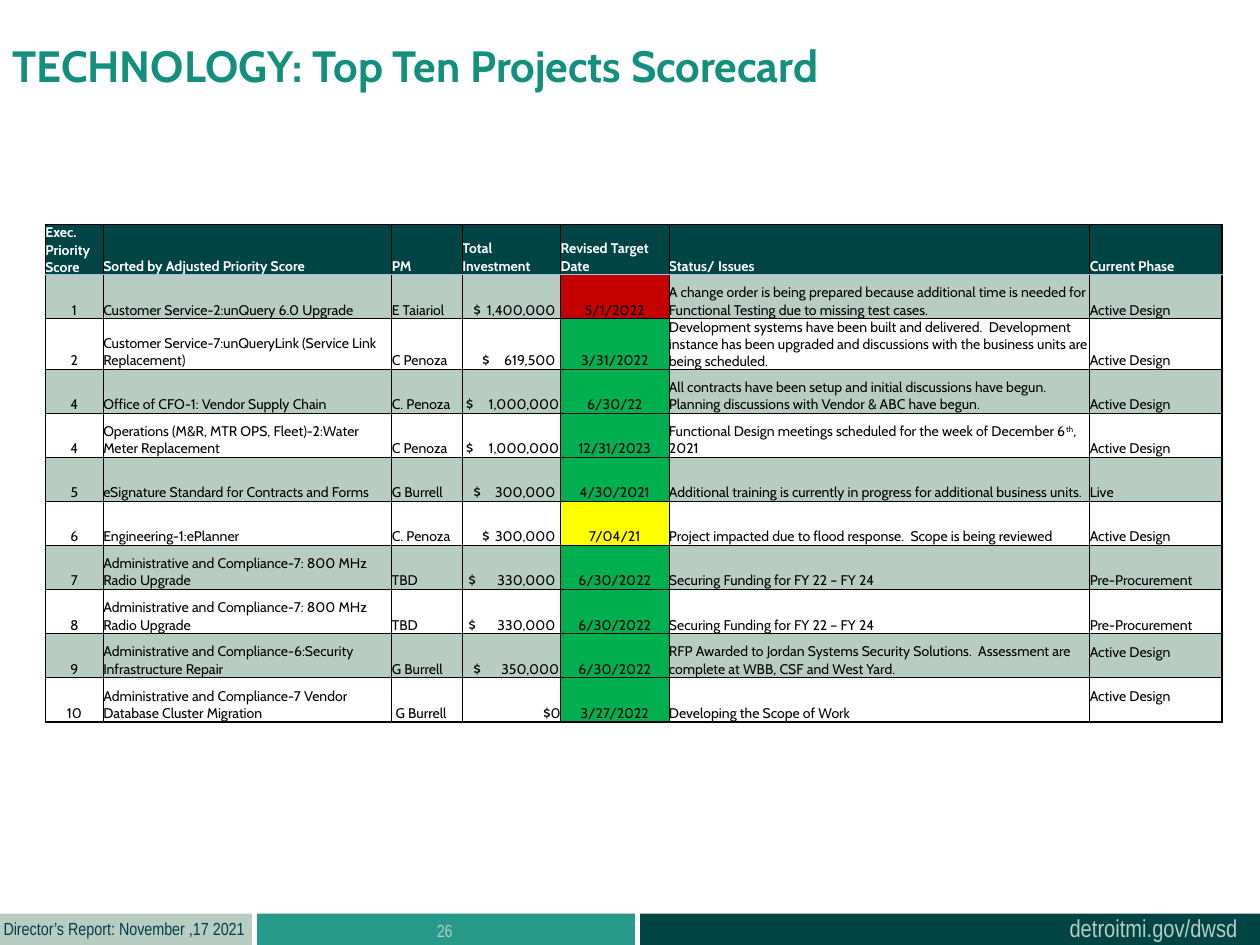
from lxml.etree import SubElement
from pptx import Presentation
from pptx.dml.color import RGBColor
from pptx.enum.shapes import MSO_SHAPE
from pptx.enum.text import MSO_ANCHOR, PP_ALIGN
from pptx.oxml.ns import qn
from pptx.util import Inches, Pt

TEAL = RGBColor(0x27, 0x99, 0x89)
TITLE_TEAL = RGBColor(0x13, 0x8F, 0x7E)
DARK_GREEN = RGBColor(0x00, 0x44, 0x45)
SAGE = RGBColor(0xB7, 0xCD, 0xC2)
NAVY = RGBColor(0x00, 0x3B, 0x49)
BLACK = RGBColor(0x00, 0x00, 0x00)
WHITE = RGBColor(0xFF, 0xFF, 0xFF)
LIGHT_BLUE = RGBColor(0x9B, 0xC2, 0xE6)
RED = RGBColor(0xC4, 0x00, 0x00)
GREEN = RGBColor(0x00, 0xB0, 0x50)
YELLOW = RGBColor(0xFF, 0xFF, 0x00)

FOOTER_BARS = [(2.04, 3, TEAL), (5.08, 4.92, DARK_GREEN), (0, 2, SAGE)]
COLUMN_WIDTHS = [0.46, 2.29, 0.56, 0.78, 0.86, 3.34, 1.05]
CENTERED_COLUMNS = (0, 4)
MONEY_COLUMN, DATE_COLUMN, PHASE_COLUMN = 3, 4, 6
HEADERS = ["Exec. Priority Score", "Sorted by Adjusted Priority Score", "PM",
           "Total Investment", "Revised Target Date", "Status/ Issues", "Current Phase"]
PROJECTS = [
    ["1", "Customer Service-2:unQuery 6.0 Upgrade", "E Taiariol", "$\t1,400,000", "5/1/2022",
     "A change order is being prepared because additional time is needed for "
     "Functional Testing due to missing test cases.", "Active Design"],
    ["2", "Customer Service-7:unQueryLink (Service Link Replacement)", "C Penoza",
     "$\t619,500", "3/31/2022",
     "Development systems have been built and delivered.  Development instance has been "
     "upgraded and discussions with the business units are being scheduled.",
     "Active Design"],
    ["4", "Office of CFO-1: Vendor Supply Chain", "C. Penoza", "$\t1,000,000", "6/30/22",
     "All contracts have been setup and initial discussions have begun.  "
     "Planning discussions with Vendor & ABC have begun.", "Active Design"],
    ["4", "Operations (M&R, MTR OPS, Fleet)-2:Water Meter Replacement", "C Penoza",
     "$\t1,000,000", "12/31/2023",
     "Functional Design meetings scheduled for the week of December 6^th^, 2021",
     "Active Design"],
    ["5", "eSignature Standard for Contracts and Forms", "G Burrell", "$\t300,000",
     "4/30/2021",
     "Additional training is currently in progress for additional business units.", "Live"],
    ["6", "Engineering-1:ePlanner", "C. Penoza", "$\t300,000", "7/04/21",
     "Project impacted due to flood response.  Scope is being reviewed", "Active Design"],
    ["7", "Administrative and Compliance-7: 800 MHz Radio Upgrade", "TBD", "$\t330,000",
     "6/30/2022", "Securing Funding for FY 22 – FY 24", "Pre-Procurement"],
    ["8", "Administrative and Compliance-7: 800 MHz Radio Upgrade", "TBD", "$\t330,000",
     "6/30/2022", "Securing Funding for FY 22 – FY 24", "Pre-Procurement"],
    ["9", "Administrative and Compliance-6:Security Infrastructure Repair", "G Burrell",
     "$\t350,000", "6/30/2022",
     "RFP Awarded to Jordan Systems Security Solutions.  Assessment are complete at "
     "WBB, CSF and West Yard.", "Active Design"],
    ["10", "Administrative and Compliance-7 Vendor Database Cluster Migration", "G Burrell",
     "$0", "3/27/2022", "Developing the Scope of Work", "Active Design"],
]
DATE_FILLS = {1: RED, 6: YELLOW}
DOLLAR_INSETS = [0.09, 0.16, 0.03, 0.03, 0.09, 0.16, 0.05, 0.05, 0.09]
AMOUNT_ENDS = [0.74, 0.74, 0.77, 0.77, 0.74, 0.74, 0.74, 0.74, 0.77]
RAISED_PHASE_ROWS = (9, 10)


def add_run(paragraph, text, size, font_name, color, bold=False):
    """Add a formatted run to a paragraph."""
    run = paragraph.add_run()
    run.text = text
    for name, value in {"size": Pt(size), "name": font_name, "bold": bold}.items():
        setattr(run.font, name, value)
    run.font.color.rgb = color
    return run


def add_bar(slide, left, width, color):
    """Add a plain footer bar."""
    shape = slide.shapes.add_shape(
        MSO_SHAPE.RECTANGLE, Inches(left), Inches(7.25), Inches(width), Inches(0.25))
    shape.shadow.inherit = False
    shape.fill.solid()
    shape.fill.fore_color.rgb = color
    shape.line.fill.background()


def add_text(slide, box, text, size, font_name, color, bold=False, wrap=True,
             align=PP_ALIGN.LEFT):
    """Add a one-paragraph text box."""
    shape = slide.shapes.add_textbox(*(Inches(length) for length in box))
    shape.text_frame.word_wrap = wrap
    paragraph = shape.text_frame.paragraphs[0]
    paragraph.alignment = align
    add_run(paragraph, text, size, font_name, color, bold)


def add_border(cell, side, color, width):
    """Draw one border of a table cell."""
    line = SubElement(cell._tc.get_or_add_tcPr(), qn(f"a:ln{side}"), w=str(Pt(width)))
    SubElement(SubElement(line, qn("a:solidFill")), qn("a:srgbClr"), val=str(color))


def style_cell(cell, row, column):
    """Set the borders, fill and insets of a scorecard cell."""
    last_row, last_column = len(PROJECTS), len(HEADERS) - 1
    borders = {
        "L": (BLACK, 1 if column == 0 else 0.5),
        "R": (BLACK, 1 if column == last_column else 0.5),
        "T": (LIGHT_BLUE if row == 1 else BLACK, 1 if row == 0 else 0.5),
        "B": (LIGHT_BLUE if row == 0 else BLACK, 1 if row == last_row else 0.5),
    }
    for side, (color, width) in borders.items():
        add_border(cell, side, color, width)
    if row == 0:
        fill = DARK_GREEN
    elif column == DATE_COLUMN:
        fill = DATE_FILLS.get(row, GREEN)
    else:
        fill = SAGE if row % 2 else None
    if fill is None:
        cell.fill.background()
    else:
        cell.fill.solid()
        cell.fill.fore_color.rgb = fill
    cell.vertical_anchor = MSO_ANCHOR.BOTTOM
    for side in ("left", "right", "top", "bottom"):
        setattr(cell, f"margin_{side}", 0)
    if column == PHASE_COLUMN and row in RAISED_PHASE_ROWS:
        cell.margin_bottom = Inches(0.13)
    if column == 2 and row == last_row:
        cell.margin_left = Inches(0.03)


def align_amount(cell, row):
    """Place the dollar sign by inset and the amount by a right tab."""
    inset = DOLLAR_INSETS[row - 1]
    cell.margin_left = Inches(inset)
    properties = cell.text_frame.paragraphs[0]._p.get_or_add_pPr()
    position = Inches(AMOUNT_ENDS[row - 1] - inset)
    SubElement(SubElement(properties, qn("a:tabLst")), qn("a:tab"),
               pos=str(position), algn="r")


def fill_cell(cell, text, row, column):
    """Write the text of a cell, raising any part between carets."""
    paragraph = cell.text_frame.paragraphs[0]
    if "\t" in text:
        align_amount(cell, row)
    elif row and column == MONEY_COLUMN:
        paragraph.alignment = PP_ALIGN.RIGHT
    elif row and column in CENTERED_COLUMNS:
        paragraph.alignment = PP_ALIGN.CENTER
    for index, part in enumerate(text.split("^")):
        run = add_run(paragraph, part, 8, "Cabin", BLACK if row else WHITE, row == 0)
        if index % 2:
            run._r.get_or_add_rPr().set("baseline", "30000")


def add_scorecard(slide):
    """Add the project table."""
    rows = [HEADERS, *PROJECTS]
    table = slide.shapes.add_table(len(rows), len(HEADERS), Inches(0.36), Inches(1.78),
                                   Inches(9.34), Inches(3.87)).table
    table.first_row = table.horz_banding = False
    for column, width in zip(table.columns, COLUMN_WIDTHS):
        column.width = Inches(width)
    for row, texts in enumerate(rows):
        table.rows[row].height = Inches(0.35 if row else 0.37)
        for column, text in enumerate(texts):
            cell = table.cell(row, column)
            style_cell(cell, row, column)
            fill_cell(cell, text, row, column)


def main():
    """Build and save the scorecard slide."""
    presentation = Presentation()
    presentation.slide_width, presentation.slide_height = Inches(10), Inches(7.5)
    slide = presentation.slides.add_slide(presentation.slide_layouts[6])
    for left, width, color in FOOTER_BARS:
        add_bar(slide, left, width, color)
    add_text(slide, (8.39, 7.2, 1.55, 0.34), "detroitmi.gov/dwsd", 14, "Arial Narrow", SAGE,
             wrap=False)
    add_text(slide, (-0.07, 7.24, 2.13, 0.27), "Director’s Report: November ,17 2021", 10,
             "Arial Narrow", NAVY, wrap=False)
    add_text(slide, (2.03, 7.25, 3, 0.4), "26", 10, "Arial Narrow", SAGE,
             align=PP_ALIGN.CENTER)
    add_text(slide, (0, 0.26, 7.59, 0.77), "TECHNOLOGY: Top Ten Projects Scorecard", 25,
             "Cabin", TITLE_TEAL, bold=True)
    add_scorecard(slide)
    presentation.save("out.pptx")


if __name__ == "__main__":
    main()
